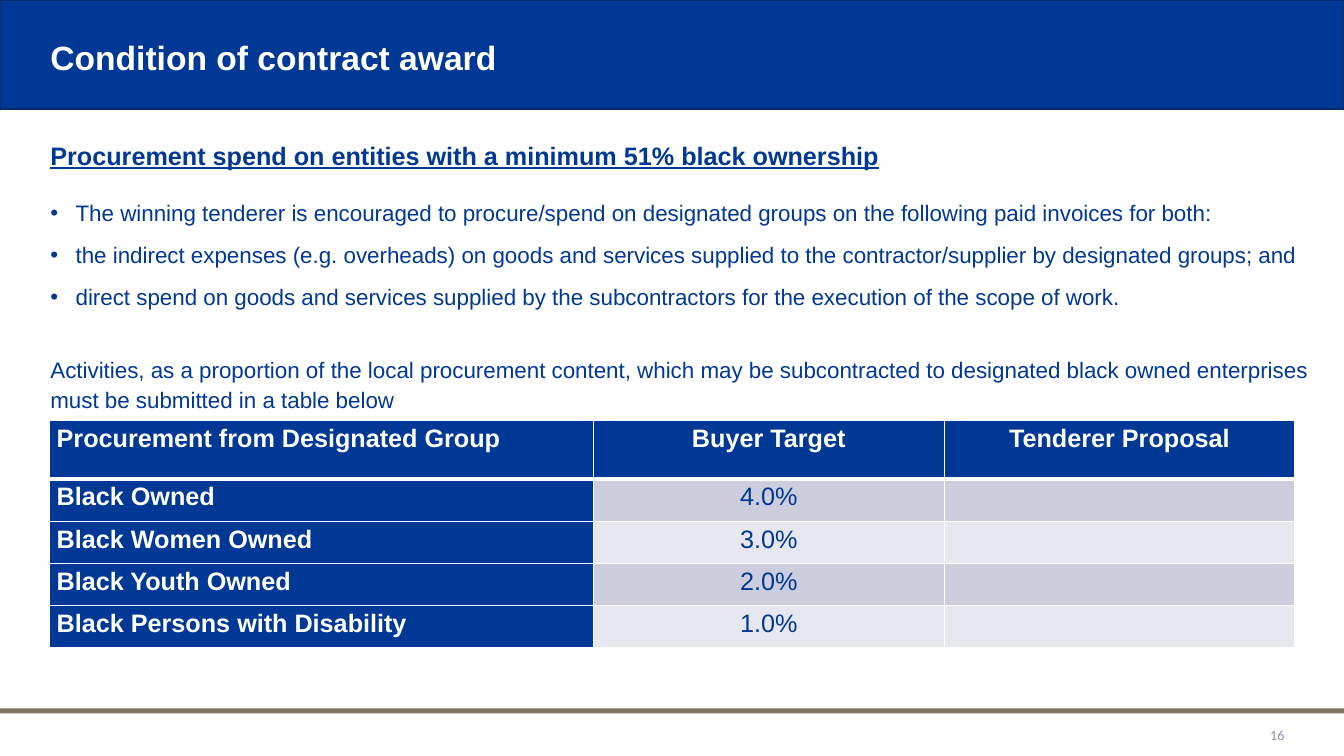
from lxml import etree
from pptx import Presentation
from pptx import util as u
from pptx.dml.color import RGBColor
from pptx.enum import shapes, text
from pptx.oxml import ns

Pt = u.Pt
BLUE = RGBColor(0x00, 0x38, 0x96)
NAVY = RGBColor(0x00, 0x29, 0x6F)
BROWN = RGBColor(0x83, 0x72, 0x5B)
LILAC = RGBColor(0x8C, 0x91, 0xB8)
DARK_BAND = RGBColor(0xCC, 0xCE, 0xDD)
LIGHT_BAND = RGBColor(0xE7, 0xE8, 0xEF)
WHITE = RGBColor(0xFF, 0xFF, 0xFF)
LEFT, JUSTIFY = text.PP_ALIGN.LEFT, text.PP_ALIGN.JUSTIFY
CENTER, RIGHT = text.PP_ALIGN.CENTER, text.PP_ALIGN.RIGHT


def set_font(para, size, color, bold=False, name="Arial"):
    para.font.name = name
    para.font.size = Pt(size)
    para.font.bold = bold
    para.font.color.rgb = color


def add_border(cell, side, width):
    line = etree.SubElement(cell._tc.get_or_add_tcPr(), ns.qn(f"a:ln{side}"), w=str(Pt(width)))
    fill = etree.SubElement(line, ns.qn("a:solidFill"))
    etree.SubElement(fill, ns.qn("a:srgbClr"), val=str(WHITE))


deck = Presentation()
deck.slide_width, deck.slide_height = Pt(960), Pt(540)
page = deck.slides.add_slide(deck.slide_layouts[1])
title, body = page.placeholders

bars = [(0, 78, BLUE, NAVY), (506, 3.6, BROWN, None)]
for index, (top, height, color, outline) in enumerate(bars):
    bar = page.shapes.add_shape(shapes.MSO_SHAPE.RECTANGLE, 0, Pt(top), Pt(960), Pt(height))
    bar.shadow.inherit = False
    bar.fill.solid()
    bar.fill.fore_color.rgb = color
    if outline:
        bar.line.color.rgb = outline
        bar.line.width = Pt(1)
    else:
        bar.line.fill.background()
    page.shapes._spTree.insert(2 + index, bar._element)

title.left, title.top, title.width, title.height = Pt(28.8), Pt(16.5), Pt(749), Pt(52.5)
title.text_frame.text = "Condition of contract award"
title.text_frame.auto_size = text.MSO_AUTO_SIZE.NONE
title.text_frame.vertical_anchor = text.MSO_ANCHOR.MIDDLE
heading = title.text_frame.paragraphs[0]
heading.alignment = LEFT
heading.line_spacing = 0.9
set_font(heading, 24, WHITE, True)

body.left, body.top, body.width, body.height = Pt(28.8), Pt(85.7), Pt(913.7), Pt(393)
body.text_frame.auto_size = text.MSO_AUTO_SIZE.NONE
body_lines = [
    ("Procurement spend on entities with a minimum 51% black ownership", 18, JUSTIFY, 1.5, 0, 3, False),
    ("The winning tenderer is encouraged to procure/spend on designated groups on the following "
     "paid invoices for both:", 16, JUSTIFY, 1.5, 8, 0, True),
    ("the indirect expenses (e.g. overheads) on goods and services supplied to the "
     "contractor/supplier by designated groups; and", 16, JUSTIFY, 1.15, 8, 0, True),
    ("direct spend on goods and services supplied by the subcontractors for the execution of "
     "the scope of work.", 16, JUSTIFY, 1.15, 8, 0, True),
    ("Activities, as a proportion of the local procurement content, which may be subcontracted to "
     "designated black owned enterprises must be submitted in a table below",
     16, LEFT, 1.13, 30, 3, False),
]
body.text_frame.text = "\n".join(line[0] for line in body_lines)
for para, line in zip(body.text_frame.paragraphs, body_lines):
    wording, size, alignment, spacing, before, after, bulleted = line
    para.alignment = alignment
    para.line_spacing = spacing
    para.space_before, para.space_after = Pt(before), Pt(after)
    properties = para._p.get_or_add_pPr()
    indent = Pt(18) if bulleted else 0
    properties.set("marL", str(indent))
    properties.set("indent", str(-indent))
    if bulleted:
        etree.SubElement(properties, ns.qn("a:buChar"), char="•")
    else:
        etree.SubElement(properties, ns.qn("a:buNone"))
    set_font(para, size, BLUE)
subheading = body.text_frame.paragraphs[0]
subheading.font.bold = subheading.font.underline = True

rows = [
    ("Procurement from Designated Group", "Buyer Target", "Tenderer Proposal"),
    ("Black Owned", "4.0%", ""),
    ("Black Women Owned", "3.0%", ""),
    ("Black Youth Owned", "2.0%", ""),
    ("Black Persons with Disability", "1.0%", ""),
]
table = page.shapes.add_table(5, 3, Pt(35.5), Pt(300.5), Pt(889.4), Pt(162.4)).table
for column, width in zip(table.columns, (388.4, 250.5, 250.5)):
    column.width = Pt(width)
for row, values in enumerate(rows):
    table.rows[row].height = Pt(30.2 if row else 41.6)
    for column, value in enumerate(values):
        cell = table.cell(row, column)
        cell.margin_left = cell.margin_right = Pt(5)
        cell.margin_top = cell.margin_bottom = 0
        for side in "LRTB":
            header_edge = (row, side) in ((0, "B"), (1, "T"))
            add_border(cell, side, 3 if header_edge else 1)
        is_header = row == 0 or column == 0
        cell.fill.solid()
        cell.fill.fore_color.rgb = BLUE if is_header else DARK_BAND if row % 2 else LIGHT_BAND
        cell.text = value
        para = cell.text_frame.paragraphs[0]
        para.alignment = CENTER if column else JUSTIFY
        para.line_spacing = 1.15
        set_font(para, 18, WHITE if is_header else BLUE, is_header)

box = page.shapes.add_textbox(Pt(897), Pt(510.5), Pt(27.5), Pt(28.8))
box.text_frame.word_wrap = True
box.text_frame.vertical_anchor = text.MSO_ANCHOR.MIDDLE
box.text_frame.text = "16"
number = box.text_frame.paragraphs[0]
number.alignment = RIGHT
set_font(number, 10, LILAC, name="Calibri")

deck.save("out.pptx")
